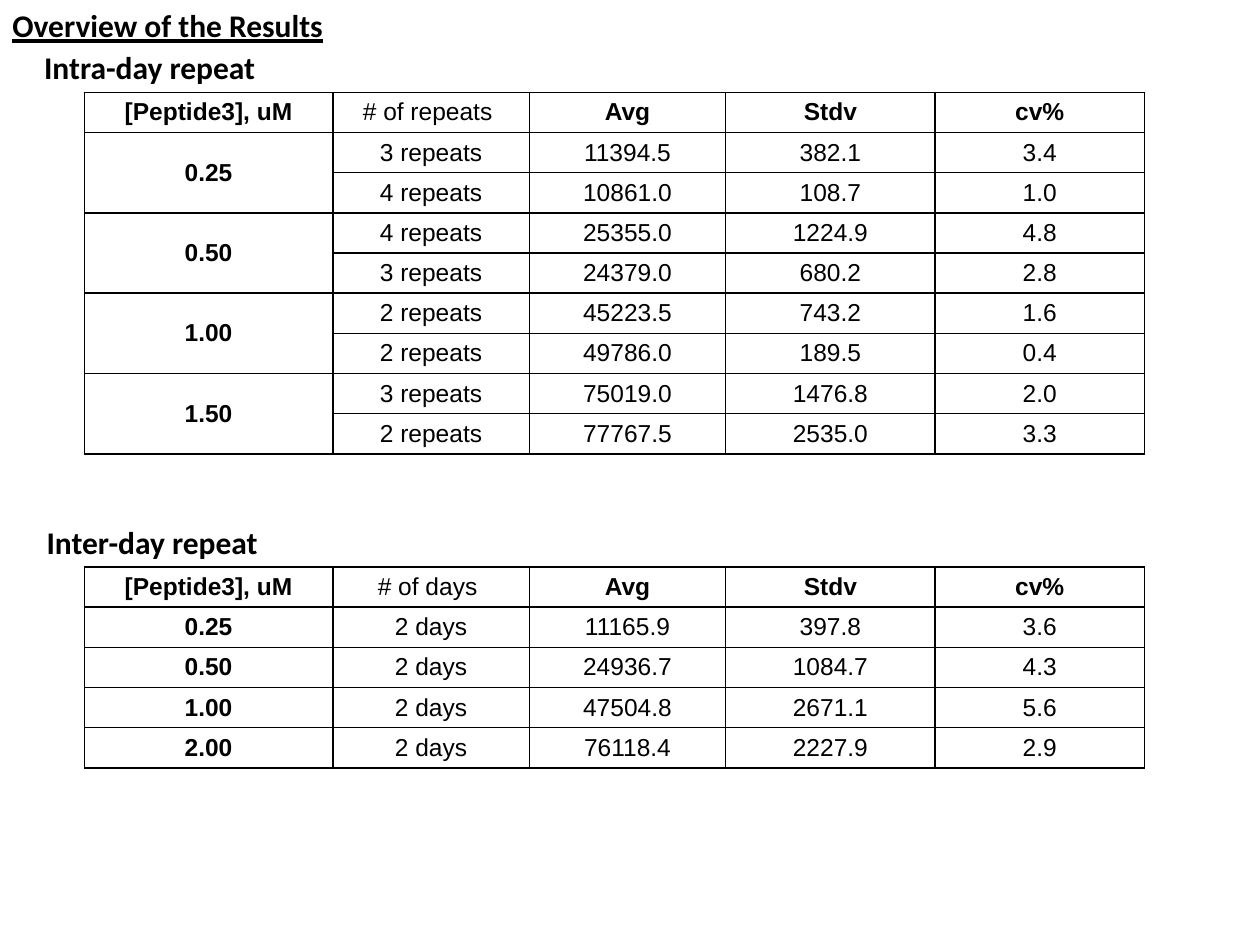
from dataclasses import dataclass

from lxml import etree
from pptx import Presentation
from pptx import util as u
from pptx.dml.color import RGBColor
from pptx.enum import text
from pptx.oxml.ns import qn


@dataclass(frozen=True)
class Theme:
    ink: str = "000000"
    heading_font: str = "Calibri"
    table_font: str = "Arial"
    heading_size: u.Length = u.Pt(18)
    table_size: u.Length = u.Pt(14)
    border: u.Length = u.Pt(1)


@dataclass(frozen=True)
class Heading:
    wording: str
    left: float
    top: float
    width: float
    underline: bool = False


@dataclass(frozen=True)
class ResultTable:
    top: float
    height: float
    count_label: str
    groups: dict[str, list[tuple[str, ...]]]  # concentration -> measurements


THEME = Theme()
TABLE_LEFT = 1.7
ROW_HEIGHT = 0.69
COLUMN_WIDTHS = (5.01, 3.96, 3.96, 4.22, 4.22)

HEADINGS = (
    Heading("Intra-day repeat", 0.64, 0.84, 5.28),
    Heading("Inter-day repeat", 0.69, 10.41, 5.28),
    Heading("Overview of the Results", 0, 0, 6.83, underline=True),
)

TABLES = (
    ResultTable(1.86, 7.62, "# of repeats ", {
        "0.25": [("3 repeats", "11394.5", "382.1", "3.4"),
                 ("4 repeats", "10861.0", "108.7", "1.0")],
        "0.50": [("4 repeats", "25355.0", "1224.9", "4.8"),
                 ("3 repeats", "24379.0", "680.2", "2.8")],
        "1.00": [("2 repeats", "45223.5", "743.2", "1.6"),
                 ("2 repeats", "49786.0", "189.5", "0.4")],
        "1.50": [("3 repeats", "75019.0", "1476.8", "2.0"),
                 ("2 repeats", "77767.5", "2535.0", "3.3")],
    }),
    ResultTable(11.43, 4.24, "# of days ", {
        "0.25": [("2 days", "11165.9", "397.8", "3.6")],
        "0.50": [("2 days", "24936.7", "1084.7", "4.3")],
        "1.00": [("2 days", "47504.8", "2671.1", "5.6")],
        "2.00": [("2 days", "76118.4", "2227.9", "2.9")],
    }),
)


def format_text(para, font_name: str, size: u.Length, bold: bool) -> None:
    for span in para.runs:
        span.font.name = font_name
        span.font.size = size
        span.font.bold = bold
        span.font.color.rgb = RGBColor.from_string(THEME.ink)


def add_heading(page, heading: Heading) -> None:
    box = page.shapes.add_textbox(u.Cm(heading.left), u.Cm(heading.top),
                                  u.Cm(heading.width), u.Cm(1.02))
    frame = box.text_frame
    frame.word_wrap = False
    frame.auto_size = text.MSO_AUTO_SIZE.SHAPE_TO_FIT_TEXT
    frame.text = heading.wording
    para = frame.paragraphs[0]
    format_text(para, THEME.heading_font, THEME.heading_size, bold=True)
    if heading.underline:
        para.runs[0].font.underline = True


def outline_cell(cell) -> None:
    properties = cell._tc.get_or_add_tcPr()
    for position, side in enumerate(("lnL", "lnR", "lnT", "lnB")):
        line = etree.Element(qn(f"a:{side}"), w=str(THEME.border))
        fill = etree.SubElement(line, qn("a:solidFill"))
        etree.SubElement(fill, qn("a:srgbClr"), val=THEME.ink)
        properties.insert(position, line)


def fill_row(table, row: int, values: tuple[str, ...], bold_columns: set[int]) -> None:
    for column, value in enumerate(values):
        cell = table.cell(row, column)
        cell.text_frame.text = value
        cell.vertical_anchor = text.MSO_ANCHOR.BOTTOM
        cell.fill.background()
        outline_cell(cell)
        para = cell.text_frame.paragraphs[0]
        para.alignment = text.PP_ALIGN.CENTER
        format_text(para, THEME.table_font, THEME.table_size, column in bold_columns)


def add_result_table(page, result: ResultTable) -> None:
    row_count = 1 + sum(len(group) for group in result.groups.values())
    holder = page.shapes.add_table(row_count, len(COLUMN_WIDTHS), u.Cm(TABLE_LEFT),
                                   u.Cm(result.top), u.Cm(sum(COLUMN_WIDTHS)),
                                   u.Cm(result.height))
    table = holder.table
    table.first_row = table.horz_banding = False
    for column, width in zip(table.columns, COLUMN_WIDTHS):
        column.width = u.Cm(width)
    for row in table.rows:
        row.height = u.Cm(ROW_HEIGHT)
    holder.height = u.Cm(result.height)

    # Header: everything bold but the count column
    header = ("[Peptide3], uM", result.count_label, "Avg", "Stdv", "cv%")
    fill_row(table, 0, header, {0, 2, 3, 4})

    # Measurements, one merged concentration cell per group
    start = 1
    for concentration, group in result.groups.items():
        for offset, measurement in enumerate(group):
            label = "" if offset else concentration
            fill_row(table, start + offset, (label, *measurement), {0})
        if len(group) > 1:
            first = table.cell(start, 0)
            first.merge(table.cell(start + len(group) - 1, 0))
            first.vertical_anchor = text.MSO_ANCHOR.MIDDLE
        start += len(group)


def main() -> None:
    deck = Presentation()
    deck.slide_width, deck.slide_height = u.Cm(25.4), u.Cm(19.05)
    page = deck.slides.add_slide(deck.slide_layouts[6])
    for result in TABLES:
        add_result_table(page, result)
    for heading in HEADINGS:
        add_heading(page, heading)
    deck.save("out.pptx")


if __name__ == "__main__":
    main()
